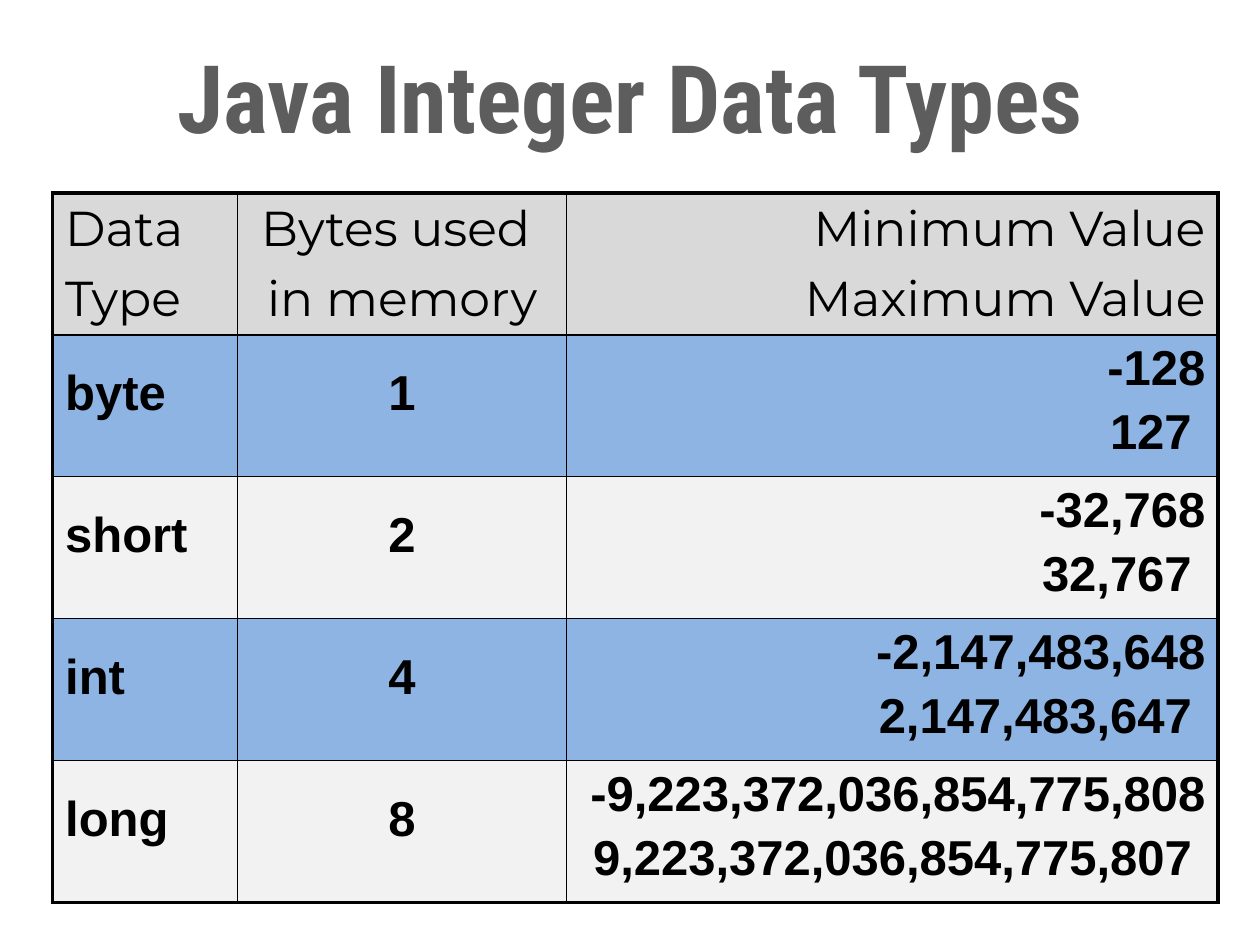
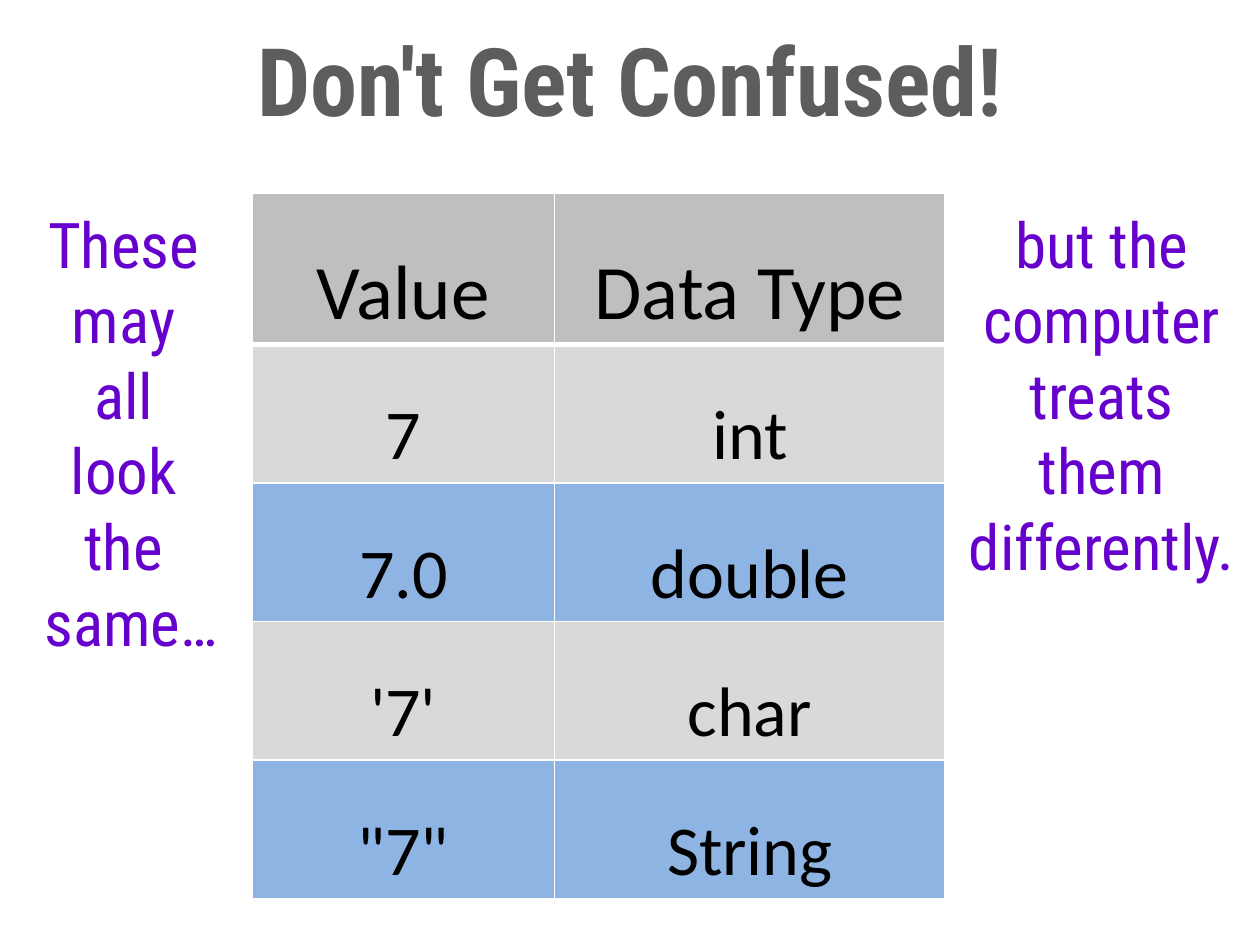
from lxml import etree
from pptx import Presentation
from pptx.dml.color import RGBColor
from pptx.enum.text import MSO_ANCHOR, MSO_AUTO_SIZE, PP_ALIGN
from pptx.oxml.ns import qn
from pptx.util import Cm, Pt

LEFT, CENTER, RIGHT = PP_ALIGN.LEFT, PP_ALIGN.CENTER, PP_ALIGN.RIGHT
TOP, MIDDLE = MSO_ANCHOR.TOP, MSO_ANCHOR.MIDDLE
FIT_SHAPE = MSO_AUTO_SIZE.SHAPE_TO_FIT_TEXT
TITLE_ONLY = 5

COLORS = {
    "title": "5D5D5D",
    "note": "6600CC",
    "text": "000000",
    "white": "FFFFFF",
    "blue": "8EB4E3",
    "pale": "F2F2F2",
    "light": "D9D9D9",
    "gray": "BFBFBF",
}
DISPLAY = "Roboto Condensed"
TABLE_TOP = Cm(3.89)


def rgb(name):
    return RGBColor.from_string(COLORS[name])


def write(tf, lines, font, size, color="text", bold=False, align=CENTER,
          gap=0, spacing=None):
    """Fill a text frame, one paragraph a line, with gap points between them."""
    for i, line in enumerate(lines):
        p = tf.add_paragraph() if i else tf.paragraphs[0]
        p.alignment = align
        p.space_before = Pt(gap if i else 0)
        if spacing:
            p.line_spacing = spacing
        r = p.add_run()
        r.text = line
        r.font.name, r.font.size, r.font.bold = font, Pt(size), bold
        r.font.color.rgb = rgb(color)


def set_borders(cell, color, widths):
    """Draw the cell's sides; widths are points for left, right, top, bottom."""
    tc_pr = cell._tc.get_or_add_tcPr()
    for side, width in zip("LRTB", widths):
        ln = etree.SubElement(tc_pr, qn(f"a:ln{side}"), w=str(Pt(width)))
        fill = etree.SubElement(ln, qn("a:solidFill"))
        etree.SubElement(fill, qn("a:srgbClr"), val=COLORS[color])


class Deck:
    def __init__(self):
        self.prs = Presentation()
        self.prs.slide_width, self.prs.slide_height = Cm(25.4), Cm(19.05)
        self.s = None

    def slide(self, title, top):
        self.s = self.prs.slides.add_slide(self.prs.slide_layouts[TITLE_ONLY])
        sp = self.s.shapes.title
        sp.left, sp.top = 0, top
        sp.width, sp.height = self.prs.slide_width, Cm(2.57)
        tf = sp.text_frame
        tf.vertical_anchor, tf.auto_size = MIDDLE, FIT_SHAPE
        write(tf, [title], DISPLAY, 54, "title", bold=True)

    def note(self, left, width, lines):
        sp = self.s.shapes.add_textbox(left, Cm(4.01), width, Cm(13.97))
        sp.text_frame.word_wrap = False
        write(sp.text_frame, lines, DISPLAY, 36, "note")

    def table(self, left, widths, heights):
        frame = self.s.shapes.add_table(len(heights), len(widths), left, TABLE_TOP,
                                        sum(widths), sum(heights))
        table = frame.table
        table.first_row = table.horz_banding = False
        for col, width in zip(table.columns, widths):
            col.width = width
        for row, height in zip(table.rows, heights):
            row.height = height
        return table

    def cell(self, cell, lines, fill, line_color, widths, anchor=TOP, **fmt):
        set_borders(cell, line_color, widths)
        cell.fill.solid()
        cell.fill.fore_color.rgb = rgb(fill)
        cell.vertical_anchor = anchor
        write(cell.text_frame, lines, **fmt)


def integer_types(deck):
    deck.slide("Java Integer Data Types", Cm(0.64))
    types = [
        ("byte", "1", "-128", "127"),
        ("short", "2", "-32,768", "32,767"),
        ("int", "4", "-2,147,483,648", "2,147,483,647"),
        ("long", "8", "-9,223,372,036,854,775,808", "9,223,372,036,854,775,807"),
    ]
    rows = [(["Data", "Type"], ["Bytes used ", "in memory"],
             ["Minimum Value", "Maximum Value"])]
    rows += [([name], [size], [low, f" {high} "]) for name, size, low, high in types]
    aligns = (LEFT, CENTER, RIGHT)
    thin, thick = 1, 2.25

    table = deck.table(Cm(1.06), [Cm(3.73), Cm(6.63), Cm(13.13)], [Cm(2.86)] * len(rows))
    last_row, last_col = len(rows) - 1, len(aligns) - 1
    for i, row in enumerate(rows):
        fill = ("blue" if i % 2 else "pale") if i else "light"
        for j, lines in enumerate(row):
            cell = table.cell(i, j)
            outer = (j == 0, j == last_col, i == 0, i == last_row)
            deck.cell(cell, lines, fill, "text",
                      [thick if edge else thin for edge in outer],
                      font="Arial" if i else "Montserrat", size=28, bold=i > 0,
                      align=aligns[j], gap=5.5)
            if len(lines) == 1:
                cell.margin_top = Cm(0.63)


def look_alikes(deck):
    deck.slide("Don't Get Confused!", Cm(0.3))
    rows = [("Value", "Data Type"), ("7", "int"), ("7.0", "double"),
            ("'7'", "char"), ('"7"', "String")]
    table = deck.table(Cm(5.08), [Cm(6.1), Cm(7.87)],
                       [Cm(3.05)] + [Cm(2.79)] * (len(rows) - 1))
    for i, row in enumerate(rows):
        fill = ("light" if i % 2 else "blue") if i else "gray"
        for j, value in enumerate(row):
            deck.cell(table.cell(i, j), [value], fill, "white",
                      (1, 1, 1, 1 if i else 3), anchor=MIDDLE if i else TOP,
                      font="Calibri", size=40 if i else 44, spacing=1.5)

    deck.note(Cm(0.2), Cm(4.88), ["These ", "may ", "all ", "look ", "the ", "same…"])
    deck.note(Cm(19.25), Cm(5.92),
              ["but the", "computer", "treats", "them", "differently."])


def main():
    deck = Deck()
    integer_types(deck)
    look_alikes(deck)
    deck.prs.save("out.pptx")


if __name__ == "__main__":
    main()
